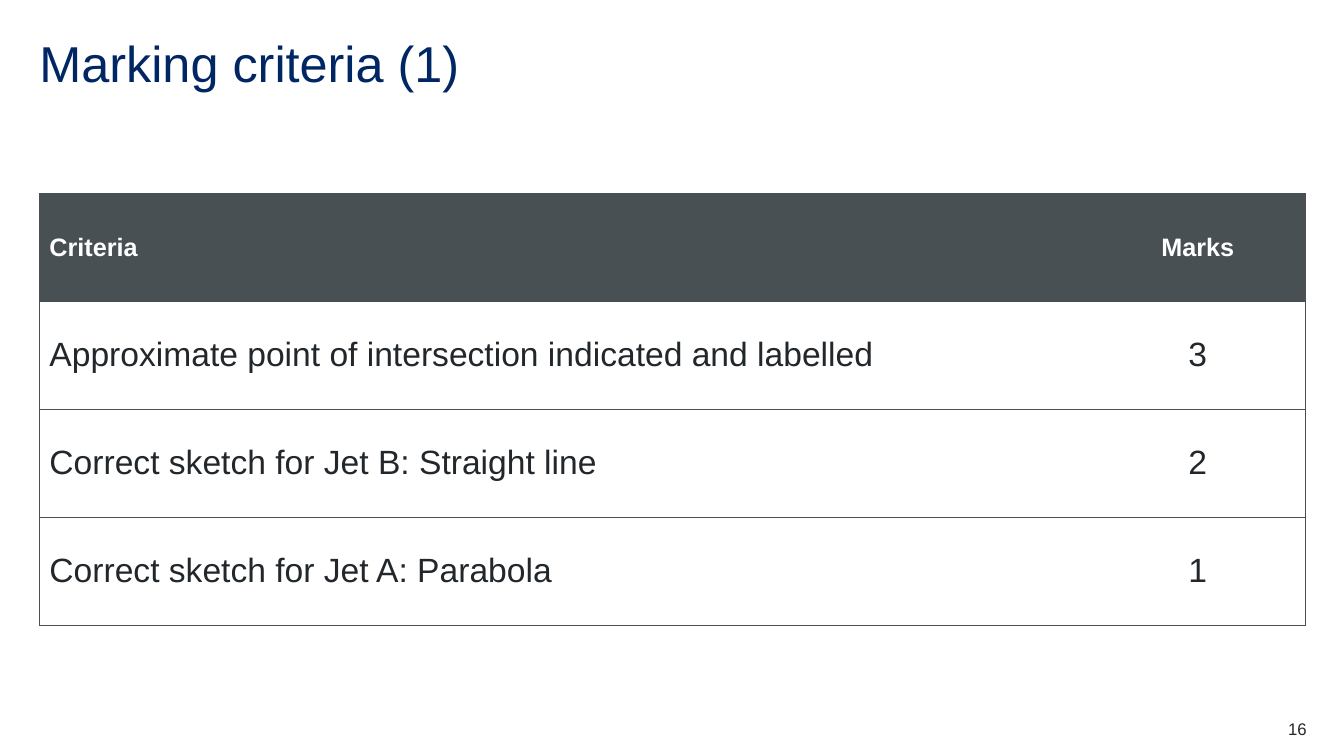
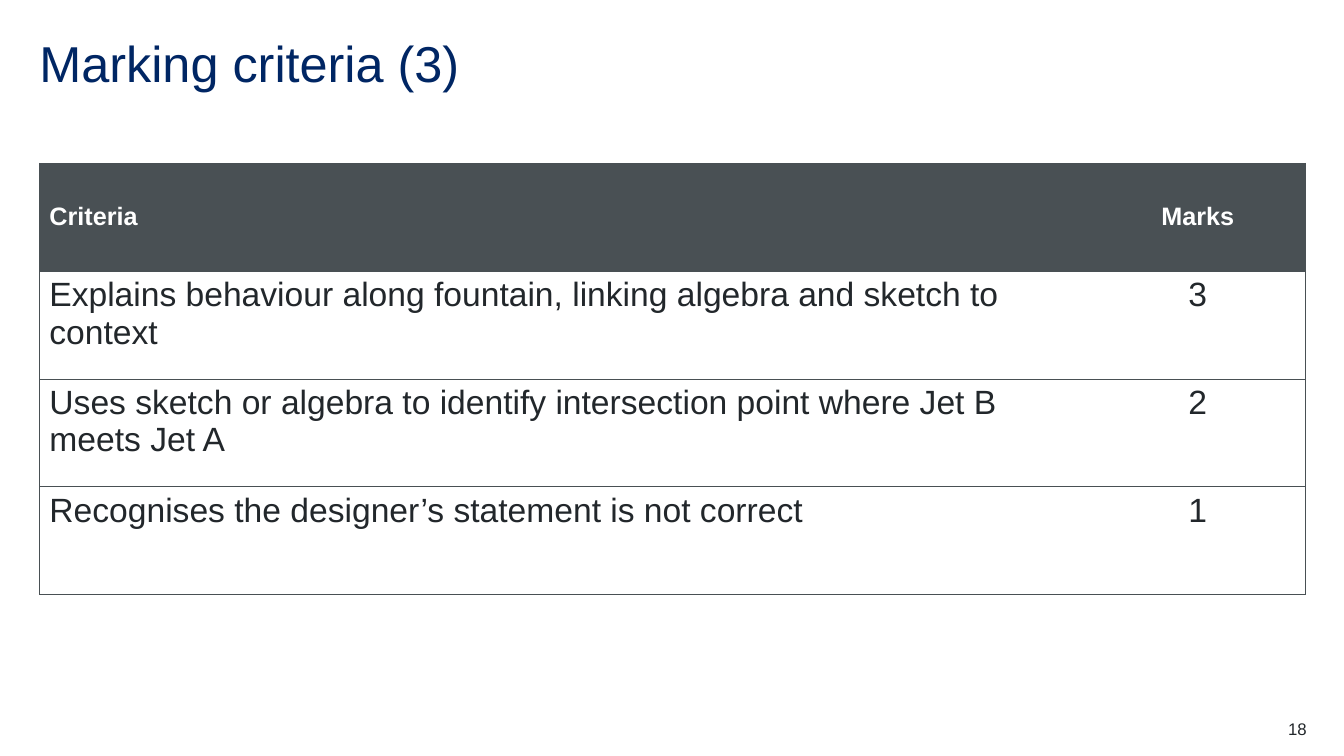
from lxml import etree
from pptx import Presentation
from pptx.dml.color import RGBColor
from pptx.enum.text import MSO_ANCHOR, PP_ALIGN
from pptx.oxml.ns import qn
from pptx.util import Inches, Pt

HUES = {"title": "002664", "head": "495054", "text": "22272B", "white": "FFFFFF"}
LEFT, WIDTH = 0.39, 12.56
COLS = (10.42, 2.14)
ROW = 1.07
HEADER = ("Criteria", "Marks")

SLIDES = [
    ("Marking criteria (1)", "16", 1.92, MSO_ANCHOR.MIDDLE, [
        ("Approximate point of intersection indicated and labelled", "3"),
        ("Correct sketch for Jet B: Straight line", "2"),
        ("Correct sketch for Jet A: Parabola", "1"),
    ]),
    ("Marking criteria (3)", "18", 1.62, MSO_ANCHOR.TOP, [
        ("Explains behaviour along fountain, linking algebra and sketch to context", "3"),
        ("Uses sketch or algebra to identify intersection point where Jet B meets Jet A", "2"),
        ("Recognises the designer’s statement is not correct", "1"),
    ]),
]


def write(frame, text, size=24, hue="text", bold=False, align=PP_ALIGN.LEFT,
          anchor=MSO_ANCHOR.TOP, space=1.0, inset=None):
    frame.word_wrap = True
    frame.vertical_anchor = anchor
    if inset is not None:
        frame.margin_left = frame.margin_right = Inches(inset)
        frame.margin_top = frame.margin_bottom = Inches(inset)
    para = frame.paragraphs[0]
    para.alignment = align
    para.line_spacing = space
    run = para.add_run()
    run.text = text
    run.font.name = "Arial"
    run.font.size = Pt(size)
    run.font.bold = bold
    run.font.color.rgb = RGBColor.from_string(HUES[hue])


def border(cell, sides):
    """Draw thin lines on the given sides (of L, R, T, B) and clear the rest."""
    props = cell._tc.get_or_add_tcPr()
    for spot, side in enumerate("LRTB"):
        line = etree.Element(qn(f"a:ln{side}"), w=str(Pt(0.5)))
        if side in sides:
            fill = etree.SubElement(line, qn("a:solidFill"))
            etree.SubElement(fill, qn("a:srgbClr"), val=HUES["head"])
        else:
            etree.SubElement(line, qn("a:noFill"))
        props.insert(spot, line)


deck = Presentation()
deck.slide_width, deck.slide_height = Inches(13.33), Inches(7.5)

for name, page, top, anchor, marks in SLIDES:
    slide = deck.slides.add_slide(deck.slide_layouts[5])
    title = slide.shapes.title
    title.left, title.top = Inches(LEFT), Inches(0.39)
    title.width, title.height = Inches(WIDTH), Inches(0.6)
    write(title.text_frame, name, size=36, hue="title", space=0.9, inset=0)

    rows = [HEADER, *marks]
    table = slide.shapes.add_table(
        len(rows), len(COLS), Inches(LEFT), Inches(top),
        Inches(WIDTH), Inches(ROW * len(rows))).table
    table.first_row = True
    table.horz_banding = False
    for col, width in zip(table.columns, COLS):
        col.width = Inches(width)

    for r, row in enumerate(rows):
        table.rows[r].height = Inches(ROW)
        head = r == 0
        for c, text in enumerate(row):
            cell = table.cell(r, c)
            cell.fill.solid()
            cell.fill.fore_color.rgb = RGBColor.from_string(HUES["head" if head else "white"])
            cell.vertical_anchor = MSO_ANCHOR.MIDDLE if head else anchor
            write(cell.text_frame, text, size=18 if head else 24,
                  hue="white" if head else "text", bold=head,
                  align=PP_ALIGN.CENTER if c else PP_ALIGN.LEFT)
            border(cell, "RTB" if c else "LTB")

    box = slide.shapes.add_textbox(Inches(12.17), Inches(7.13), Inches(0.79), Inches(0.2))
    write(box.text_frame, page, size=12, align=PP_ALIGN.RIGHT, inset=0)

deck.save("out.pptx")
